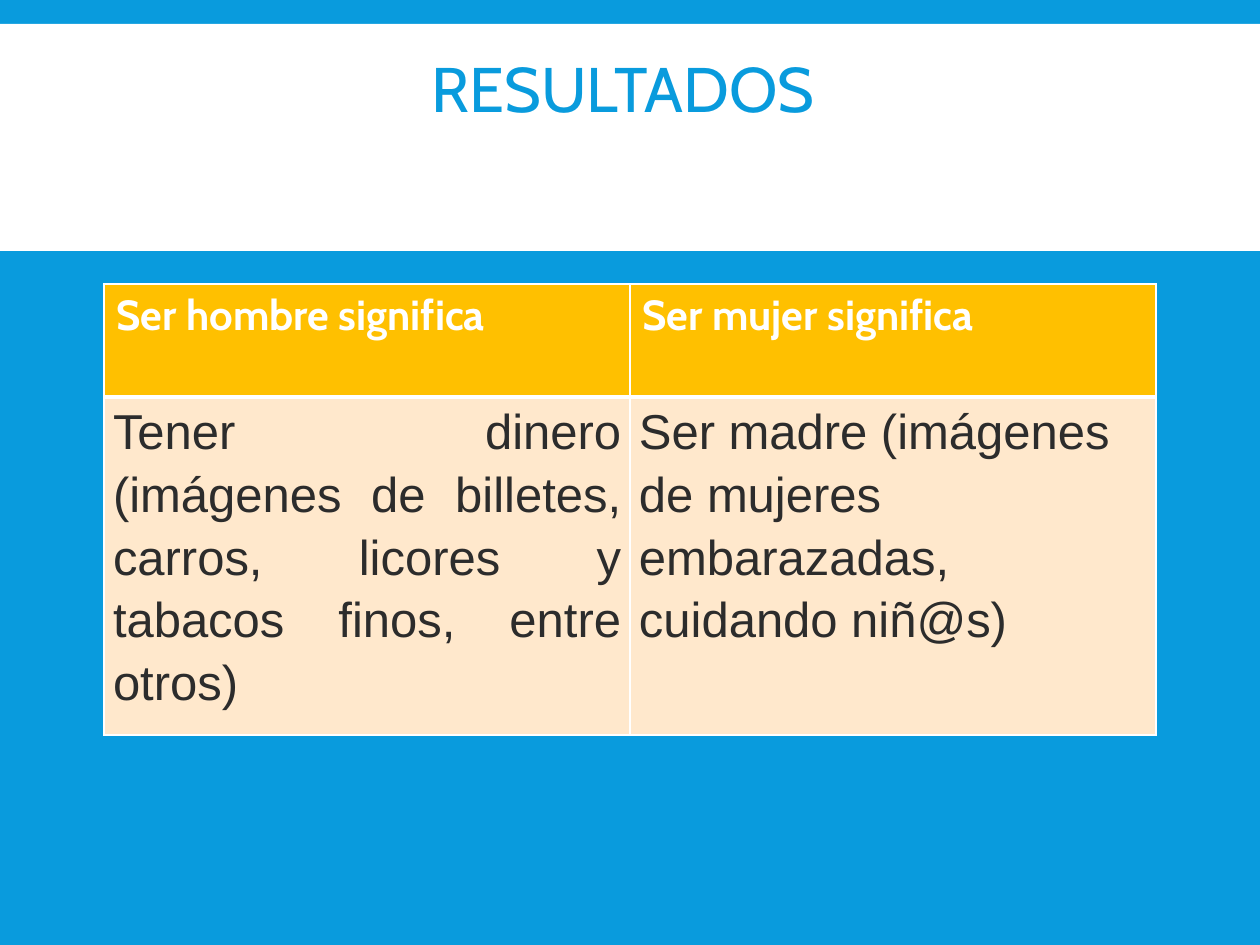
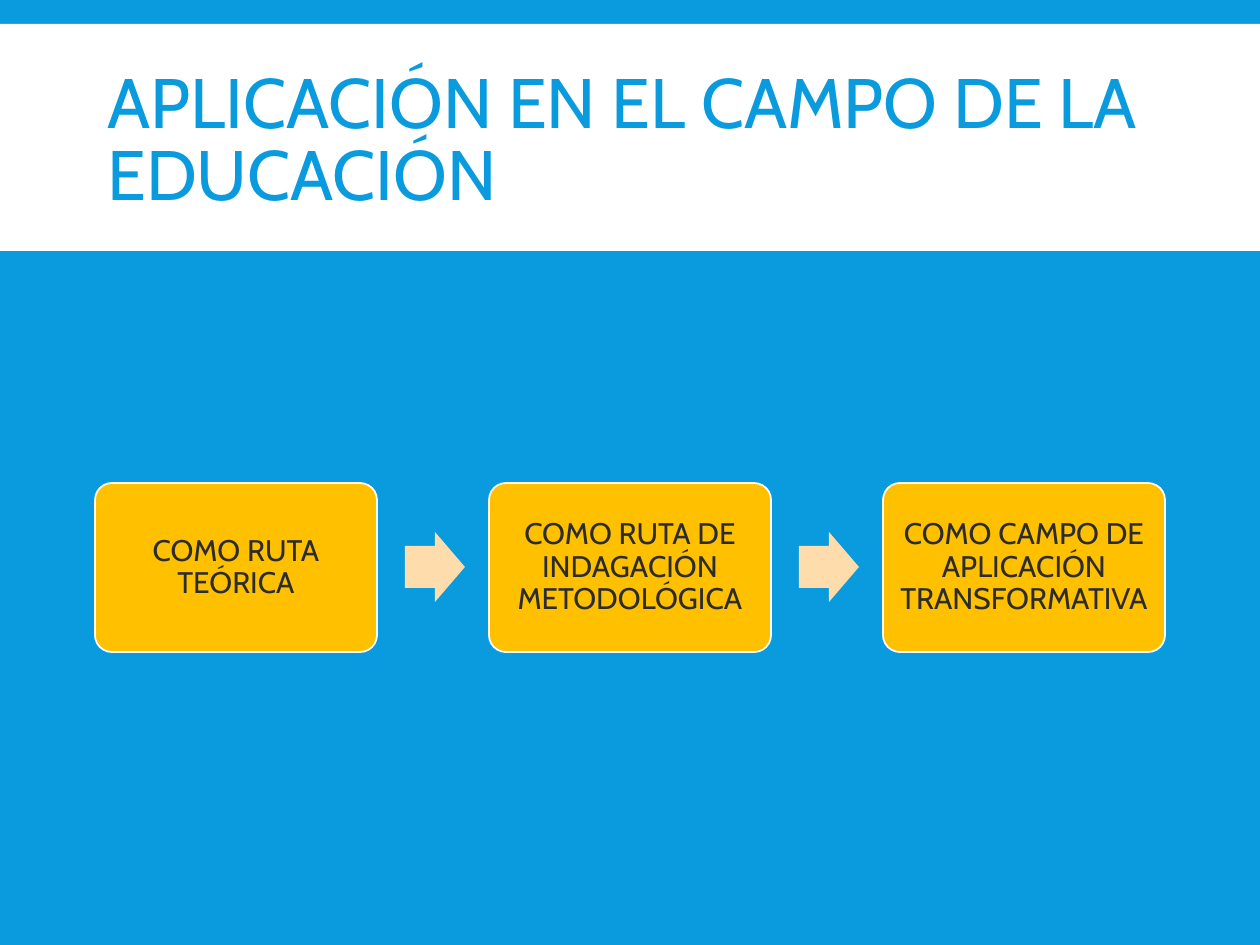
import pptx
import pptx.dml.color
import pptx.enum.shapes
import pptx.enum.text
import pptx.oxml
import pptx.oxml.ns
import pptx.util

EMU_PER_PX = 914400 / 126
WIDTH, HEIGHT = 1260, 945
COLORS = {
    "blue": "099BDD",
    "white": "FFFFFF",
    "amber": "FFC000",
    "cream": "FFE8CC",
    "peach": "FFDCAB",
    "ink": "2C2C2C",
}
HEADING_FONT, BODY_FONT = "Cabin", "Arial"
SHAPE = pptx.enum.shapes.MSO_SHAPE
ALIGN = pptx.enum.text.PP_ALIGN
ANCHOR = pptx.enum.text.MSO_ANCHOR


def px(length):
    return pptx.util.Emu(round(length * EMU_PER_PX))


def rgb(name):
    return pptx.dml.color.RGBColor.from_string(COLORS[name])


class Deck:
    """Holds the shared style and the slide being filled."""

    def __init__(self):
        self.prs = pptx.Presentation()
        self.prs.slide_width, self.prs.slide_height = px(WIDTH), px(HEIGHT)
        self.slide = None

    def add_slide(self):
        self.slide = self.prs.slides.add_slide(self.prs.slide_layouts[6])
        background = self.slide.background.fill
        background.solid()
        background.fore_color.rgb = rgb("blue")
        self.shape(SHAPE.RECTANGLE, (0, 24, WIDTH, 227), "white")

    def shape(self, preset, box, fill, line=None, adjustments=()):
        shape = self.slide.shapes.add_shape(preset, *map(px, box))
        shape.shadow.inherit = False
        shape.fill.solid()
        shape.fill.fore_color.rgb = rgb(fill)
        if line:
            shape.line.color.rgb = rgb(line)
            shape.line.width = pptx.util.Pt(1)
        else:
            shape.line.fill.background()
        for index, value in enumerate(adjustments):
            shape.adjustments[index] = value
        return shape

    def set_text(self, frame, text, size, color, font=HEADING_FONT,
                 align=ALIGN.LEFT, spacing=1.0, bold=False):
        frame.word_wrap = True
        paragraph = frame.paragraphs[0]
        paragraph.text = text
        paragraph.alignment = align
        paragraph.line_spacing = spacing
        paragraph.font.name = font
        paragraph.font.size = pptx.util.Pt(size)
        paragraph.font.bold = bold
        paragraph.font.color.rgb = rgb(color)

    def title(self, text, box, size, align=ALIGN.LEFT):
        frame = self.slide.shapes.add_textbox(*map(px, box)).text_frame
        frame.vertical_anchor = ANCHOR.MIDDLE
        self.set_text(frame, text, size, "blue", align=align, spacing=0.85)

    def step(self, text, box):
        step = self.shape(SHAPE.ROUNDED_RECTANGLE, box, "amber", "white", [0.1])
        frame = step.text_frame
        frame.margin_left = frame.margin_right = px(9)
        frame.margin_top = frame.margin_bottom = px(9)
        frame.vertical_anchor = ANCHOR.MIDDLE
        self.set_text(frame, text, 17, "ink", align=ALIGN.CENTER, spacing=0.9)

    def borders(self, cell, **widths):
        """Draw white cell edges; widths are points by side: L, R, T, B."""
        properties = cell._tc.get_or_add_tcPr()
        for side, width in widths.items():
            properties.append(pptx.oxml.parse_xml(
                f'<a:ln{side} {pptx.oxml.ns.nsdecls("a")} w="{pptx.util.Pt(width)}">'
                f'<a:solidFill><a:srgbClr val="{COLORS["white"]}"/></a:solidFill>'
                f'</a:ln{side}>'))

    def table(self, columns, box, row_heights):
        """Each column is its heading, its body text and the body alignment."""
        table = self.slide.shapes.add_table(
            len(row_heights), len(columns), *map(px, box)).table
        table.first_row = table.horz_banding = False
        for row, height in zip(table.rows, row_heights):
            row.height = px(height)
        for index, (heading, body, align) in enumerate(columns):
            head_cell, body_cell = table.cell(0, index), table.cell(1, index)
            self.borders(head_cell, L=1, R=1, T=1, B=3)
            self.borders(body_cell, L=1, R=1, T=3, B=1)
            for cell, fill in ((head_cell, "amber"), (body_cell, "cream")):
                cell.fill.solid()
                cell.fill.fore_color.rgb = rgb(fill)
            body_cell.margin_left = body_cell.margin_right = px(9)
            body_cell.margin_top = body_cell.margin_bottom = 0
            self.set_text(head_cell.text_frame, heading, 24, "white", bold=True)
            self.set_text(body_cell.text_frame, body, 28, "ink", BODY_FONT, align, 1.15)


def results_slide(deck):
    deck.add_slide()
    deck.title("RESULTADOS", (105, 55, 1036, 76), 36, ALIGN.CENTER)
    meanings = [
        ("Ser hombre significa",
         "Tener dinero (imágenes de billetes, carros, licores y tabacos finos, entre otros)",
         ALIGN.JUSTIFY),
        ("Ser mujer significa",
         "Ser madre (imágenes de mujeres embarazadas, cuidando niñ@s)",
         ALIGN.LEFT),
    ]
    deck.table(meanings, (104, 284, 1052, 427), (113, 314))


def application_slide(deck):
    deck.add_slide()
    deck.title("APLICACIÓN EN EL CAMPO DE LA EDUCACIÓN", (95, 39, 1071, 208), 40)
    routes = [
        "COMO RUTA TEÓRICA",
        "COMO RUTA DE INDAGACIÓN METODOLÓGICA",
        "COMO CAMPO DE APLICACIÓN TRANSFORMATIVA",
    ]
    first_left, pitch, top, width, height = 95, 394, 483, 282, 169
    arrow_width, arrow_height, arrow_gap = 60, 70, 28
    for index, route in enumerate(routes):
        left = first_left + index * pitch
        if index:
            arrow_left = left - pitch + width + arrow_gap
            arrow_top = top + (height - arrow_height) // 2
            deck.shape(SHAPE.RIGHT_ARROW,
                       (arrow_left, arrow_top, arrow_width, arrow_height),
                       "peach", adjustments=[0.6, 0.5])
        deck.step(route, (left, top, width, height))


def main():
    deck = Deck()
    results_slide(deck)
    application_slide(deck)
    deck.prs.save("out.pptx")


if __name__ == "__main__":
    main()
